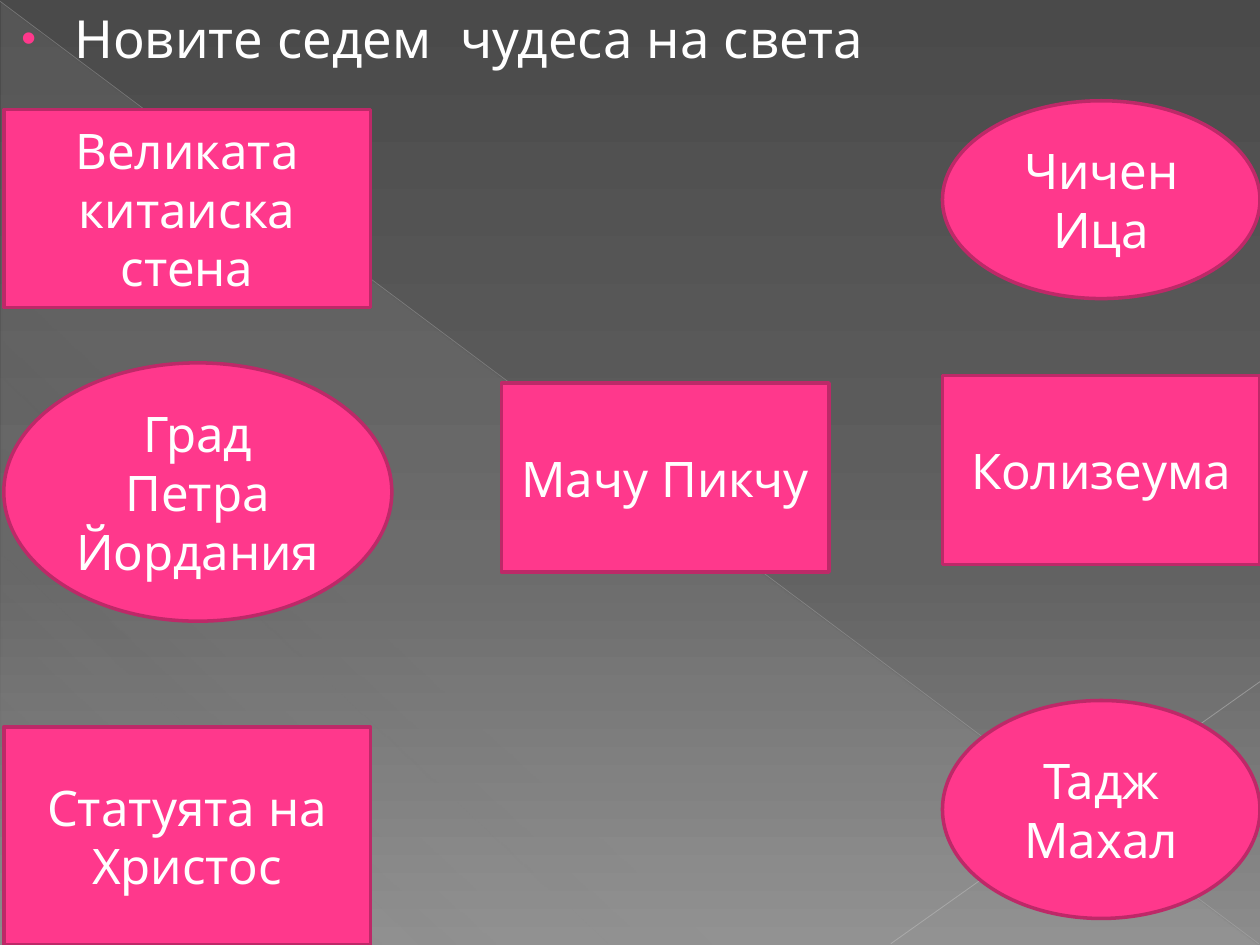
from dataclasses import dataclass

from lxml import etree
from pptx import Presentation
from pptx import util as u
from pptx.dml.color import RGBColor
from pptx.enum import shapes, text
from pptx.oxml.ns import qn


@dataclass(frozen=True)
class Theme:
    font: str = "Quicksand"
    white: str = "FFFFFF"
    pink: str = "FF388C"
    edge: str = "BD2968"
    title_size: int = 30
    label_size: int = 28
    edge_width: float = 2


@dataclass(frozen=True)
class Wonder:
    label: str
    kind: shapes.MSO_SHAPE
    left: float
    top: float
    width: float
    height: float


T = Theme()
RECT, OVAL = shapes.MSO_SHAPE.RECTANGLE, shapes.MSO_SHAPE.OVAL
LEFT, RIGHT, RIGHT_W = 0.03, 7.48, 2.52

WONDERS = [
    Wonder("Великата китаиска стена", RECT, LEFT, 0.87, 2.91, 1.57),
    Wonder("Град Петра Йордания", OVAL, LEFT, 2.88, 3.08, 2.05),
    Wonder("Статуята на Христос", RECT, LEFT, 5.77, 2.91, 1.73),
    Wonder("Мачу Пикчу", RECT, 3.98, 3.04, 2.6, 1.5),
    Wonder("Чичен Ица", OVAL, RIGHT, 0.8, RIGHT_W, 1.57),
    Wonder("Колизеума", RECT, RIGHT, 2.98, RIGHT_W, 1.5),
    Wonder("Тадж Махал", OVAL, RIGHT, 5.56, RIGHT_W, 1.73),
]


def add(parent, tag: str, **attrs):
    return etree.SubElement(parent, qn(tag), {k: str(v) for k, v in attrs.items()})


def set_gradient(fill, owner, stops: list[tuple], angle: int) -> None:
    """Fill with (position %, colour, opacity %) stops at a clockwise angle."""
    fill.gradient()
    grad = owner.find(".//" + qn("a:gradFill"))
    for child in list(grad):
        grad.remove(child)
    gs_list = add(grad, "a:gsLst")
    for pos, color, opacity in stops:
        gs = add(gs_list, "a:gs", pos=pos * 1000)
        clr = add(gs, "a:srgbClr", val=color)
        add(clr, "a:alpha", val=opacity * 1000)
    add(grad, "a:lin", ang=angle * 60000, scaled=0)


def add_line(s, start: tuple, end: tuple, color: str, width: float, opacity: int) -> None:
    ends = [u.Inches(v) for v in (*start, *end)]
    line = s.shapes.add_connector(shapes.MSO_CONNECTOR.STRAIGHT, *ends)
    line.line.width = u.Pt(width)
    line.line.color.rgb = RGBColor.from_string(color)
    add(line._element.find(".//" + qn("a:srgbClr")), "a:alpha", val=opacity * 1000)
    add(line._element.spPr, "a:effectLst")


def write(p, words: str, size: int) -> None:
    r = p.add_run()
    r.text = words
    for name, value in {"name": T.font, "size": u.Pt(size)}.items():
        setattr(r.font, name, value)
    r.font.color.rgb = RGBColor.from_string(T.white)


def add_wonder(s, w: Wonder) -> None:
    box = [u.Inches(v) for v in (w.left, w.top, w.width, w.height)]
    sp = s.shapes.add_shape(w.kind, *box)
    sp.shadow.inherit = False
    sp.fill.solid()
    sp.fill.fore_color.rgb = RGBColor.from_string(T.pink)
    sp.line.color.rgb = RGBColor.from_string(T.edge)
    sp.line.width = u.Pt(T.edge_width)
    tf = sp.text_frame
    for name, value in {"word_wrap": True, "vertical_anchor": text.MSO_ANCHOR.MIDDLE}.items():
        setattr(tf, name, value)
    p = tf.paragraphs[0]
    p.alignment = text.PP_ALIGN.CENTER
    write(p, w.label, T.label_size)


def add_backdrop(s) -> None:
    set_gradient(s.background.fill, s._element,
                 [(0, "4A4A4A", 100), (60, "626262", 100), (100, "8C8C8C", 100)], 90)
    sp = s.shapes.add_shape(shapes.MSO_SHAPE.RIGHT_TRIANGLE, *[
        u.Inches(v) for v in (0.01, 0.02, 9.98, 7.48)])
    sp.shadow.inherit = False
    sp.line.fill.background()
    set_gradient(sp.fill, sp._element,
                 [(0, "D2D2D2", 10), (70, "D2D2D2", 8), (100, "D2D2D2", 1)], 133)
    add_line(s, (0, 0.01), (9.99, 7.49), "BFBFBF", 0.39, 35)
    add_line(s, (10, 5.41), (7.07, 7.49), "C6C6C6", 0.47, 45)


def fill_body(prs, s) -> None:
    body = s.placeholders[1]
    frame = {"left": 0, "top": 0, "width": prs.slide_width, "height": prs.slide_height}
    for name, value in frame.items():
        setattr(body, name, value)
    p = body.text_frame.paragraphs[0]
    write(p, "Новите седем  чудеса на света", T.title_size)
    pPr = p._p.get_or_add_pPr()
    pPr.set("marL", str(u.Inches(0.49)))
    pPr.set("indent", str(u.Inches(-0.42)))
    add(add(pPr, "a:buClr"), "a:srgbClr", val=T.pink)
    add(pPr, "a:buSzPct", val=80000)
    add(pPr, "a:buFont", typeface="Arial")
    add(pPr, "a:buChar", char="•")
    # Bring the body in front of the backdrop
    s.shapes._spTree.append(body._element)


def main() -> None:
    prs = Presentation()
    prs.slide_width, prs.slide_height = u.Inches(10), u.Inches(7.5)
    s = prs.slides.add_slide(prs.slide_layouts[1])
    title = s.shapes.title._element
    title.getparent().remove(title)

    add_backdrop(s)
    fill_body(prs, s)
    for wonder in WONDERS:
        add_wonder(s, wonder)
    prs.save("out.pptx")


if __name__ == "__main__":
    main()
